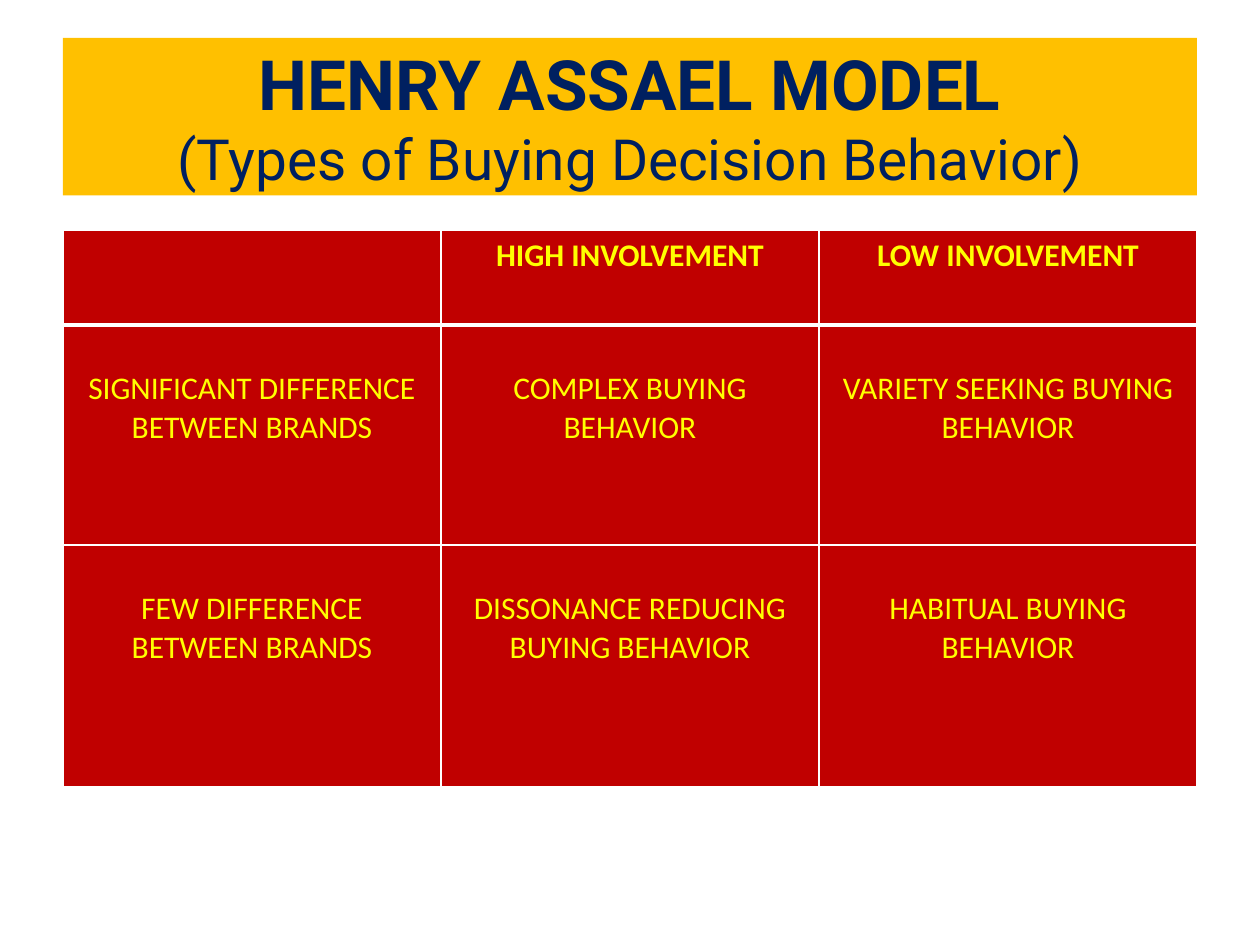
from dataclasses import dataclass

from lxml import etree
from pptx import Presentation
from pptx import util as u
from pptx.dml.color import RGBColor
from pptx.enum import shapes, text
from pptx.oxml.ns import qn

WIDE, HIGH = u.Inches(10), u.Inches(7.5)
HUES = {"gold": "FFC000", "navy": "002060", "red": "C00000",
        "yellow": "FFFF00", "white": "FFFFFF"}
HEAD = {"name": "Roboto", "size": u.Pt(39.6), "bold": True}
SUB = {"name": "Roboto", "size": u.Pt(32.4), "bold": False}
TOP = {"name": "Calibri", "size": u.Pt(18), "bold": True}
BODY = {**TOP, "bold": False}


@dataclass
class Row:
    tall: float
    pad: float
    over: int
    under: int
    form: dict
    words: tuple


ROWS = (
    Row(0.1, 0.05, 1, 3, TOP, ("", "HIGH INVOLVEMENT", "LOW INVOLVEMENT")),
    Row(0.233, 0.355, 3, 1, BODY,
        ("SIGNIFICANT DIFFERENCE BETWEEN BRANDS", "COMPLEX BUYING BEHAVIOR",
         "VARIETY SEEKING BUYING BEHAVIOR")),
    Row(0.256, 0.355, 1, 1, BODY,
        ("FEW DIFFERENCE BETWEEN BRANDS", "DISSONANCE REDUCING BUYING BEHAVIOR",
         "HABITUAL BUYING BEHAVIOR")),
)


def hue(key: str) -> RGBColor:
    return RGBColor.from_string(HUES[key])


def share(left: float, top: float, wide: float, tall: float) -> tuple:
    return (int(WIDE * left), int(HIGH * top), int(WIDE * wide), int(HIGH * tall))


def write(para, words: str, form: dict, key: str) -> None:
    para.alignment = text.PP_ALIGN.CENTER
    run = para.add_run()
    run.text = words
    for name, value in form.items():
        setattr(run.font, name, value)
    run.font.color.rgb = hue(key)


def edge(cell, side: str, points: int) -> None:
    line = etree.SubElement(cell._tc.get_or_add_tcPr(), qn(f"a:ln{side}"),
                            w=str(u.Pt(points)))
    fill = etree.SubElement(line, qn("a:solidFill"))
    etree.SubElement(fill, qn("a:srgbClr"), val=HUES["white"])


def draw_cell(cell, row: Row, words: str) -> None:
    cell.margin_top = u.Inches(row.pad)
    for side, points in zip("LRTB", (1, 1, row.over, row.under)):
        edge(cell, side, points)
    cell.fill.solid()
    cell.fill.fore_color.rgb = hue("red")
    if words:
        write(cell.text_frame.paragraphs[0], words, row.form, "yellow")


def draw_title(slide) -> None:
    box = slide.shapes.add_shape(shapes.MSO_SHAPE.RECTANGLE,
                                 *share(0.05, 0.04, 0.9, 1 / 6))
    box.shadow.inherit = False
    box.fill.solid()
    box.fill.fore_color.rgb = hue("gold")
    box.line.fill.background()
    box.text_frame.word_wrap = True
    box.text_frame.vertical_anchor = text.MSO_ANCHOR.MIDDLE
    para = box.text_frame.paragraphs[0]
    write(para, "HENRY ASSAEL MODEL", HEAD, "navy")
    para.add_line_break()
    write(para, "(Types of Buying Decision Behavior)", SUB, "navy")


def draw_grid(slide) -> None:
    tall = sum(row.tall for row in ROWS)
    grid = slide.shapes.add_table(len(ROWS), 3,
                                  *share(0.05, 0.244, 0.9, tall)).table
    for i, row in enumerate(ROWS):
        grid.rows[i].height = int(HIGH * row.tall)
        for j, words in enumerate(row.words):
            draw_cell(grid.cell(i, j), row, words)


def main() -> None:
    deck = Presentation()
    deck.slide_width, deck.slide_height = WIDE, HIGH
    slide = deck.slides.add_slide(deck.slide_layouts[6])
    draw_title(slide)
    draw_grid(slide)
    deck.save("out.pptx")


if __name__ == "__main__":
    main()
